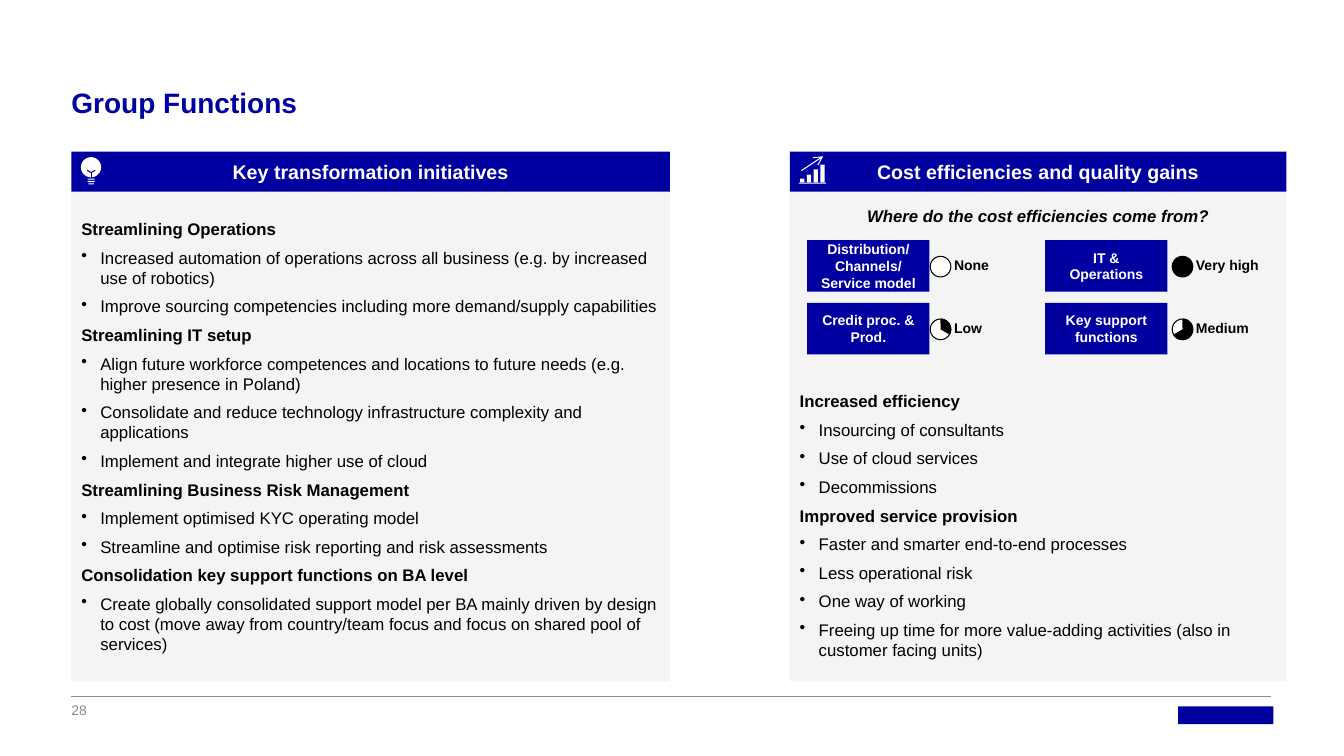
"""Build the Group Functions slide."""
from dataclasses import dataclass

from lxml import etree
from pptx import Presentation
from pptx.dml.color import RGBColor
from pptx.enum.shapes import MSO_CONNECTOR, MSO_SHAPE
from pptx.enum.text import MSO_ANCHOR, MSO_AUTO_SIZE, PP_ALIGN
from pptx.oxml.ns import qn
from pptx.shapes.autoshape import Shape
from pptx.slide import Slide
from pptx.util import Cm, Pt

RECT, OVAL, ARC = MSO_SHAPE.RECTANGLE, MSO_SHAPE.OVAL, MSO_SHAPE.ARC
STRAIGHT = MSO_CONNECTOR.STRAIGHT
LEFT, CENTER = PP_ALIGN.LEFT, PP_ALIGN.CENTER
TOP, MIDDLE, BOTTOM = MSO_ANCHOR.TOP, MSO_ANCHOR.MIDDLE, MSO_ANCHOR.BOTTOM
NO_FIT = MSO_AUTO_SIZE.NONE


@dataclass(frozen=True)
class Theme:
    """Colours, font and type sizes."""
    navy: RGBColor = RGBColor(0x00, 0x00, 0xA0)
    panel: RGBColor = RGBColor(0xF4, 0xF4, 0xF4)
    grey: RGBColor = RGBColor(0x8B, 0x8A, 0x8D)
    black: RGBColor = RGBColor(0, 0, 0)
    white: RGBColor = RGBColor(0xFF, 0xFF, 0xFF)
    font: str = "Arial"
    title: int = 20
    header: int = 14
    body: int = 12
    small: int = 10


THEME = Theme()


@dataclass(frozen=True)
class Box:
    """Position and size in centimetres."""
    x: float
    y: float
    w: float
    h: float


@dataclass(frozen=True)
class Style:
    """Look of a text."""
    size: int
    color: RGBColor = THEME.black
    bold: bool = True
    italic: bool = False
    align: PP_ALIGN = LEFT
    anchor: MSO_ANCHOR = TOP
    inset: bool = True


@dataclass(frozen=True)
class Topic:
    """A bold heading and its bullets."""
    heading: str
    bullets: tuple[str, ...]


@dataclass(frozen=True)
class Panel:
    """A headed column."""
    header: str
    x: float
    w: float


@dataclass(frozen=True)
class Driver:
    """A cost area with its rating; the dial is filled up to an angle."""
    name: str
    rating: str
    fill: RGBColor = THEME.white
    end_angle: int | None = None


INITIATIVES = Panel("Key transformation initiatives", 1.8, 15.09)
GAINS = Panel("Cost efficiencies and quality gains", 19.91, 12.52)
INITIATIVE_TOPICS = (
    Topic("Streamlining Operations", (
        "Increased automation of operations across all business (e.g. by increased use of robotics)",
        "Improve sourcing competencies including more demand/supply capabilities")),
    Topic("Streamlining IT setup", (
        "Align future workforce competences and locations to future needs (e.g. higher presence in Poland)",
        "Consolidate and reduce technology infrastructure complexity and applications",
        "Implement and integrate higher use of cloud")),
    Topic("Streamlining Business Risk Management", (
        "Implement optimised KYC operating model",
        "Streamline and optimise risk reporting and risk assessments")),
    Topic("Consolidation key support functions on BA level", (
        "Create globally consolidated support model per BA mainly driven by design to cost "
        "(move away from country/team focus and focus on shared pool of services)",)),
)
GAIN_TOPICS = (
    Topic("Increased efficiency", ("Insourcing of consultants", "Use of cloud services", "Decommissions")),
    Topic("Improved service provision", (
        "Faster and smarter end-to-end processes", "Less operational risk", "One way of working",
        "Freeing up time for more value-adding activities (also in customer facing units)")),
)
DRIVERS = (
    Driver("Distribution/\nChannels/\nService model", "None"),
    Driver("IT & Operations", "Very high", THEME.black),
    Driver("Credit proc. & Prod.", "Low", end_angle=30),
    Driver("Key support functions", "Medium", end_angle=150),
)


def add_block(s: Slide, kind: MSO_SHAPE, box: Box, fill: RGBColor, line: RGBColor | None = None) -> Shape:
    """Add a flat preset shape."""
    sp = s.shapes.add_shape(kind, Cm(box.x), Cm(box.y), Cm(box.w), Cm(box.h))
    sp.shadow.inherit = False
    sp.fill.solid()
    sp.fill.fore_color.rgb = fill
    if line is None:
        sp.line.fill.background()
    else:
        sp.line.color.rgb = line
        sp.line.width = Pt(0.75)
    return sp


def add_line(s: Slide, x1: float, y1: float, x2: float, y2: float,
             color: RGBColor, width: float = 0.75, arrow: bool = False) -> None:
    """Add a straight line, with an arrowhead if asked."""
    c = s.shapes.add_connector(STRAIGHT, Cm(x1), Cm(y1), Cm(x2), Cm(y2))
    c.line.color.rgb = color
    c.line.width = Pt(width)
    if arrow:
        etree.SubElement(c.line._get_or_add_ln(), qn("a:tailEnd"), type="arrow")
    etree.SubElement(c._element.spPr, qn("a:effectLst"))


def write(sp: Shape, topics: tuple[Topic, ...], style: Style) -> None:
    """Write headings and their bullets into a shape."""
    tf = sp.text_frame
    tf.word_wrap = True
    tf.auto_size = NO_FIT
    tf.vertical_anchor = style.anchor
    if not style.inset:
        tf.margin_left = tf.margin_right = tf.margin_top = tf.margin_bottom = 0
    rows = [(text, i > 0) for t in topics for i, text in enumerate((t.heading, *t.bullets))]
    for i, (text, bullet) in enumerate(rows):
        p = tf.add_paragraph() if i else tf.paragraphs[0]
        p.alignment = style.align
        p.space_before = Pt(6 if i else 0)
        if bullet:
            pr = p._p.get_or_add_pPr()
            pr.set("marL", str(Cm(0.48)))
            pr.set("indent", str(Cm(-0.48)))
            etree.SubElement(pr, qn("a:buChar"), char="•")
        for j, part in enumerate(text.split("\n")):
            if j:
                p.add_line_break()
            r = p.add_run()
            r.text = part
            r.font.name = THEME.font
            r.font.size = Pt(style.size)
            r.font.bold = style.bold and not bullet
            r.font.italic = style.italic
            r.font.color.rgb = style.color


def add_label(s: Slide, box: Box, topics: tuple[Topic, ...], style: Style) -> None:
    """Add a text box."""
    write(s.shapes.add_textbox(Cm(box.x), Cm(box.y), Cm(box.w), Cm(box.h)), topics, style)


def add_panel(s: Slide, panel: Panel) -> Shape:
    """Add a header bar and return the body below it."""
    body = add_block(s, RECT, Box(panel.x, 4.83, panel.w, 12.34), THEME.panel)
    bar = add_block(s, RECT, Box(panel.x, 3.82, panel.w, 1.01), THEME.navy)
    write(bar, (Topic(panel.header, ()),),
          Style(THEME.header, THEME.white, align=CENTER, anchor=MIDDLE))
    return body


def add_driver(s: Slide, driver: Driver, row: int, col: int) -> None:
    """Add a cost area tile, its dial and its rating."""
    y = 6.05 + 1.58 * row
    tile = add_block(s, RECT, Box(20.35 + 6 * col, y, 3.08, 1.3), THEME.navy)
    write(tile, (Topic(driver.name, ()),),
          Style(THEME.small, THEME.white, align=CENTER, anchor=MIDDLE))
    x = 23.8 + 6.1 * col
    add_label(s, Box(x, y + 0.3, 3.22, 0.69), (Topic(driver.rating, ()),), Style(THEME.small))
    dial = Box(x - 0.35, y + 0.41, 0.52, 0.52)
    add_block(s, OVAL, dial, driver.fill, THEME.black)
    if driver.end_angle is not None:
        arc = add_block(s, ARC, dial, THEME.black, THEME.black)
        for i, angle in enumerate((270, driver.end_angle)):
            arc.adjustments[i] = angle * 0.6


def add_bulb_icon(s: Slide, x: float, y: float) -> None:
    """Add a light bulb."""
    add_block(s, OVAL, Box(x, y, 0.51, 0.51), THEME.white)
    mid = x + 0.26
    add_line(s, mid, y + 0.38, mid, y + 0.52, THEME.navy)
    for side in (-0.1, 0.1):
        add_line(s, mid + side, y + 0.33, mid, y + 0.39, THEME.navy)
    for i, w in enumerate((0.18, 0.18, 0.14)):
        add_block(s, RECT, Box(mid - w / 2, y + 0.54 + 0.06 * i, w, 0.03), THEME.white)


def add_growth_icon(s: Slide, x: float, y: float) -> None:
    """Add rising bars under an arrow."""
    for i, h in enumerate((0.1, 0.2, 0.33, 0.45)):
        add_block(s, RECT, Box(x + 0.03 + 0.17 * i, y - h, 0.11, h), THEME.white)
    add_block(s, RECT, Box(x, y, 0.69, 0.03), THEME.white)
    add_line(s, x + 0.06, y - 0.3, x + 0.61, y - 0.66, THEME.white, arrow=True)


def main() -> None:
    """Build and save the slide."""
    prs = Presentation()
    prs.slide_width, prs.slide_height = Cm(33.88), Cm(19.05)
    s = prs.slides.add_slide(prs.slide_layouts[5])
    title = s.shapes.title
    title.left, title.top, title.width, title.height = Cm(1.8), Cm(1), Cm(20), Cm(2)
    write(title, (Topic("Group Functions", ()),),
          Style(THEME.title, THEME.navy, anchor=BOTTOM, inset=False))

    write(add_panel(s, INITIATIVES), INITIATIVE_TOPICS, Style(THEME.body, anchor=MIDDLE))
    add_bulb_icon(s, 2.04, 3.96)

    add_panel(s, GAINS)
    add_growth_icon(s, 20.14, 4.6)
    add_label(s, Box(GAINS.x, 5.05, GAINS.w, 0.77),
              (Topic("Where do the cost efficiencies come from?", ()),),
              Style(THEME.body, italic=True, align=CENTER))
    for i, driver in enumerate(DRIVERS):
        add_driver(s, driver, *divmod(i, 2))
    add_label(s, Box(GAINS.x, 9.73, GAINS.w, 7.09), GAIN_TOPICS, Style(THEME.body))

    add_line(s, 1.8, 17.55, 32.05, 17.55, THEME.grey)
    add_label(s, Box(1.8, 17.7, 0.9, 0.4), (Topic("28", ()),),
              Style(THEME.small, THEME.grey, bold=False, anchor=MIDDLE, inset=False))
    add_block(s, RECT, Box(29.7, 17.8, 2.4, 0.45), THEME.navy)
    prs.save("out.pptx")


if __name__ == "__main__":
    main()
